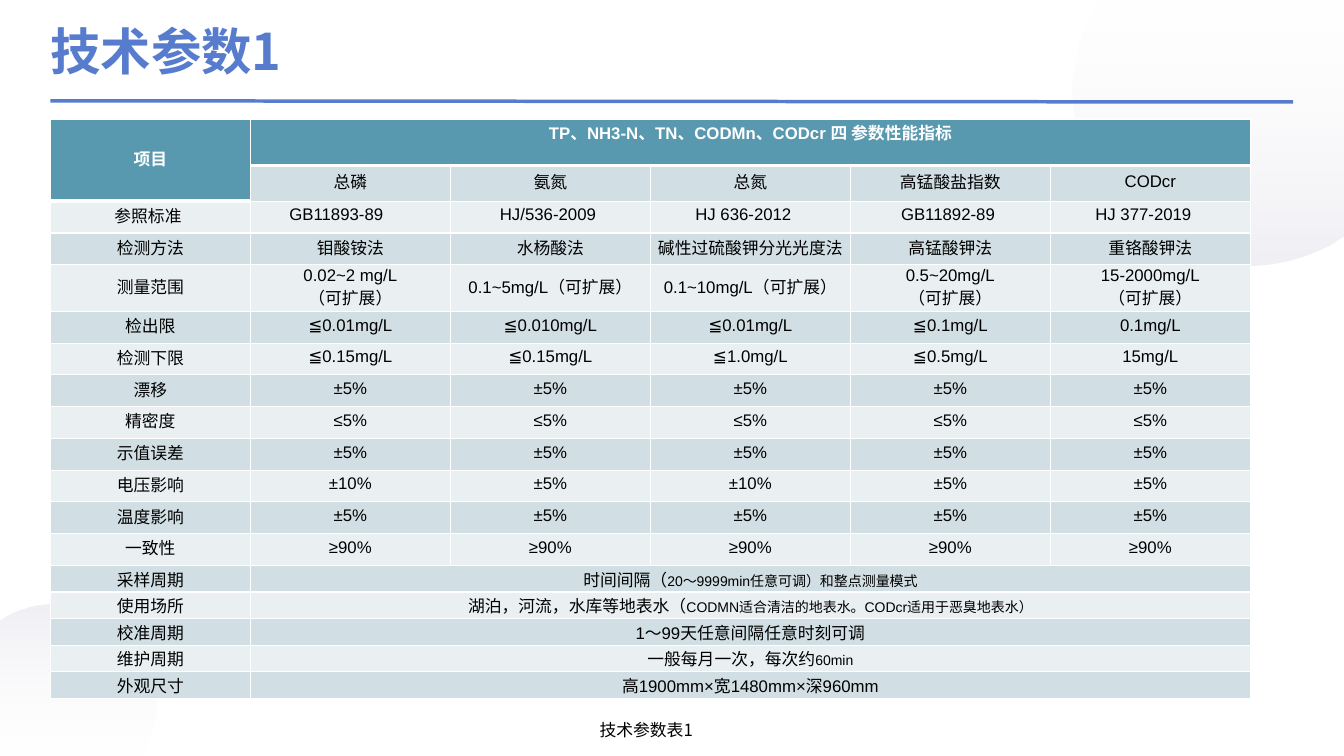
from lxml import etree
from pptx import Presentation
from pptx import util as u
from pptx.dml.color import RGBColor
from pptx.enum import shapes, text
from pptx.oxml.ns import qn

COLORS = {"blue": "577CCE", "header": "5999AF", "odd": "D1DEE3", "even": "EAEFF2",
          "white": "FFFFFF", "black": "000000", "mist": "BEBED2"}
CJK = "Noto Sans CJK SC"


def rgb(name):
    return RGBColor.from_string(COLORS[name])


def style(paragraph, size, name, color, bold=False):
    font = paragraph.font
    font.size, font.name, font.bold = u.Pt(size), name, bold
    font.color.rgb = rgb(color)


prs = Presentation()
prs.slide_width, prs.slide_height = u.Cm(33.87), u.Cm(19.05)
slide = prs.slides.add_slide(prs.slide_layouts[6])

corner_discs = [
    (270, [(27.74, 0), (33.87, 0), (33.87, 5.94), (33.53, 6.15)],
     [[(32.89, 6.48), (32.18, 6.68), (31.42, 6.68)],
      [(28.98, 6.68), (27.03, 4.75), (27.03, 2.34)],
      [(27.03, 1.6), (27.2, 0.89), (27.56, 0.28)]]),
    (90, [(3.53, 19.05), (0, 19.05), (0, 15.65), (0.2, 15.52)],
     [[(0.56, 15.34), (0.97, 15.21), (1.4, 15.21)],
      [(2.79, 15.21), (3.94, 16.33), (3.94, 17.7)],
      [(3.94, 18.14), (3.81, 18.5), (3.63, 18.9)]]),
]
for angle, outline, curves in corner_discs:
    for b, c, d in curves:
        a = outline[-1]
        for t in [step / 16 for step in range(1, 17)]:
            s = 1 - t
            outline.append(tuple(
                s**3 * a[i] + 3 * s * s * t * b[i] + 3 * s * t * t * c[i] + t**3 * d[i]
                for i in (0, 1)))
    points = [(u.Cm(x), u.Cm(y)) for x, y in outline]
    builder = slide.shapes.build_freeform(*points[0])
    builder.add_line_segments(points[1:], close=True)
    disc = builder.convert_to_shape()
    disc.shadow.inherit = False
    disc.line.fill.background()
    disc.fill.gradient()
    disc.fill.gradient_angle = angle
    for stop, color in zip(disc.fill.gradient_stops, ("white", "mist")):
        stop.color.rgb = rgb(color)
    for tint, alpha in zip(disc._element.iter(qn("a:srgbClr")), (10000, 24000)):
        etree.SubElement(tint, qn("a:alpha"), val=str(alpha))

rule = slide.shapes.add_connector(shapes.MSO_CONNECTOR.STRAIGHT,
                                  u.Cm(1.27), u.Cm(2.54), u.Cm(32.59), u.Cm(2.57))
rule.line.color.rgb = rgb("blue")
rule.line.width = u.Pt(2.5)
etree.SubElement(rule._element.spPr, qn("a:effectLst"))

title = slide.shapes.add_textbox(u.Cm(1.27), u.Cm(0.43), u.Cm(31.32), u.Cm(1.7)).text_frame
title.word_wrap = True
title.vertical_anchor = text.MSO_ANCHOR.MIDDLE
title.margin_left = title.margin_right = title.margin_top = title.margin_bottom = 0
title.text = "技术参数1"
style(title.paragraphs[0], 36, CJK, "blue", True)

caption = slide.shapes.add_textbox(u.Cm(14.86), u.Cm(18.01), u.Cm(2.87), u.Cm(0.76)).text_frame
caption.word_wrap = True
caption.auto_size = text.MSO_AUTO_SIZE.SHAPE_TO_FIT_TEXT
caption.text = "技术参数表1"
style(caption.paragraphs[0], 12, CJK, "black")

parameters = [
    ["项目", "TP、NH3-N、TN、CODMn、CODcr 四 参数性能指标"],
    ["", "总磷", "氨氮", "总氮", "高锰酸盐指数", "CODcr"],
    ["参照标准", "GB11893-89", "HJ/536-2009", "HJ 636-2012", "GB11892-89", "HJ 377-2019"],
    ["检测方法", "钼酸铵法", "水杨酸法", "碱性过硫酸钾分光光度法", "高锰酸钾法", "重铬酸钾法"],
    ["测量范围", "0.02~2 mg/L\n（可扩展）", "0.1~5mg/L（可扩展）", "0.1~10mg/L（可扩展）",
     "0.5~20mg/L\n（可扩展）", "15-2000mg/L\n（可扩展）"],
    ["检出限", "≦0.01mg/L", "≦0.010mg/L", "≦0.01mg/L", "≦0.1mg/L", "0.1mg/L"],
    ["检测下限", "≦0.15mg/L", "≦0.15mg/L", "≦1.0mg/L", "≦0.5mg/L", "15mg/L"],
    ["漂移"] + ["±5%"] * 5,
    ["精密度"] + ["≤5%"] * 5,
    ["示值误差"] + ["±5%"] * 5,
    ["电压影响", "±10%", "±5%", "±10%", "±5%", "±5%"],
    ["温度影响"] + ["±5%"] * 5,
    ["一致性"] + ["≥90%"] * 5,
    ["采样周期", "时间间隔（|20～9999min任意可调）和整点测量模式"],
    ["使用场所", "湖泊，河流，水库等地表水（|CODMN适合清洁的地表水。CODcr适用于恶臭地表水）"],
    ["校准周期", "1～99天任意间隔任意时刻可调"],
    ["维护周期", "一般每月一次，每次约|60min"],
    ["外观尺寸", "高1900mm×宽1480mm×深960mm"],
]
heights = [1.17, 0.9, 0.8, 0.8, 1.17] + [0.8] * 8 + [0.67] * 5
standard_offsets = [0.12, 0.71, 0.12, 0.35, 0.12, 0.35]

table = slide.shapes.add_table(len(parameters), 6, u.Cm(1.27), u.Cm(3),
                               u.Cm(30.24), u.Cm(sum(heights))).table
table.first_row = table.horz_banding = False
for column in table.columns:
    column.width = u.Cm(5.04)

for r, (entries, height) in enumerate(zip(parameters, heights)):
    table.rows[r].height = u.Cm(height)
    for c in range(6):
        cell = table.cell(r, c)
        heading = r == 0 or (r == 1 and c == 0)
        for side in "LRTB":
            width = 3 if heading and side == "B" else 1
            border = etree.SubElement(cell._tc.get_or_add_tcPr(), qn("a:ln" + side),
                                      w=str(u.Pt(width)))
            paint = etree.SubElement(border, qn("a:solidFill"))
            etree.SubElement(paint, qn("a:srgbClr"), val=COLORS["white"])
        cell.fill.solid()
        cell.fill.fore_color.rgb = rgb("header" if heading else "odd" if r % 2 else "even")
        cell.vertical_anchor = text.MSO_ANCHOR.MIDDLE
        cell.margin_left = cell.margin_right = cell.margin_top = u.Cm(0.03)
        cell.margin_bottom = u.Cm(0.13)
        if r == 2:
            cell.margin_right = u.Cm(0.03 + standard_offsets[c])
        main, _, detail = (entries[c] if c < len(entries) else "").partition("|")
        cell.text = main
        for paragraph in cell.text_frame.paragraphs:
            paragraph.alignment = text.PP_ALIGN.CENTER
            style(paragraph, 12, "Arial", "white" if heading else "black", heading)
        if detail:
            small = paragraph.add_run()
            small.text = detail
            small.font.size = u.Pt(10)
    if len(entries) == 2:
        table.cell(r, 1).merge(table.cell(r, 5))
table.cell(0, 0).merge(table.cell(1, 0))
table.cell(0, 1).vertical_anchor = text.MSO_ANCHOR.TOP

prs.save("out.pptx")
